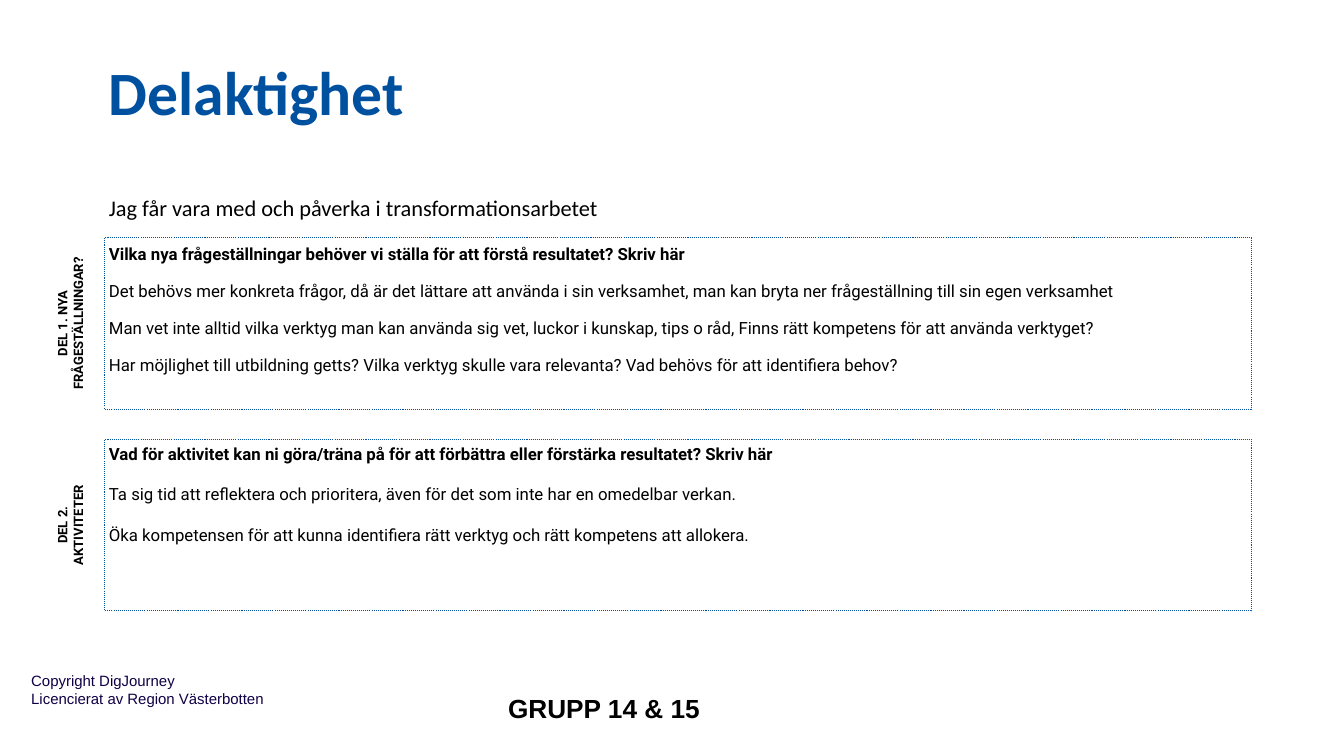
from pptx import Presentation
from pptx.dml.color import RGBColor
from pptx.enum.dml import MSO_LINE_DASH_STYLE as Dash
from pptx.enum.shapes import MSO_SHAPE as Shape
from pptx.enum.text import MSO_ANCHOR as Anchor, PP_ALIGN as Align
from pptx.util import Inches, Pt

BLUE, BLACK, NAVY = "0050A0", "000000", "110046"
LEFT, PANEL_WIDTH, PANEL_HEIGHT = 1.04, 11.37, 1.7
FIRST_PANEL_TOP, PANEL_STEP = 2.36, 2
LABEL_CENTER, LABEL_HEIGHT = 0.7, 0.58
NARROW, WIDE = 0.04, 0.13  # text insets

PANELS = [
    {
        "label": ["DEL 1. NYA FRÅGESTÄLLNINGAR?"],
        "lines": [
            "Vilka nya frågeställningar behöver vi ställa för att förstå resultatet? Skriv här",
            "Det behövs mer konkreta frågor, då är det lättare att använda i sin verksamhet, "
            "man kan bryta ner frågeställning till sin egen verksamhet",
            "Man vet inte alltid vilka verktyg man kan använda sig vet, luckor i kunskap, "
            "tips o råd, Finns rätt kompetens för att använda verktyget?",
            "Har möjlighet till utbildning getts? Vilka verktyg skulle vara relevanta? "
            "Vad behövs för att identifiera behov?",
        ],
        "line_spacing": 1.1,
        "gap": 10.7,
    },
    {
        "label": ["DEL 2.", "AKTIVITETER"],
        "lines": [
            "Vad för aktivitet kan ni göra/träna på för att förbättra eller förstärka "
            "resultatet? Skriv här",
            "Ta sig tid att reflektera och prioritera, även för det som inte har en "
            "omedelbar verkan.",
            "Öka kompetensen för att kunna identifiera rätt verktyg och rätt kompetens "
            "att allokera.",
        ],
        "line_spacing": 1.0,
        "gap": 14.5,
    },
]


def rgb(color):
    return RGBColor.from_string(color)


def write(shape, lines, font, size, color=BLACK, bold=False, align=Align.LEFT,
          anchor=Anchor.TOP, inset=WIDE):
    frame = shape.text_frame
    frame.word_wrap = True
    frame.vertical_anchor = anchor
    frame.margin_left = frame.margin_right = Inches(inset)
    frame.margin_top = frame.margin_bottom = Inches(inset)
    frame.text = "\n".join(lines)
    for paragraph in frame.paragraphs:
        paragraph.alignment = align
        for run in paragraph.runs:
            run.font.name = font
            run.font.size = Pt(size)
            run.font.bold = bold
            run.font.color.rgb = rgb(color)


def add_text(slide, box, lines, font, size, **style):
    shape = slide.shapes.add_textbox(*map(Inches, box))
    write(shape, lines, font, size, **style)
    return shape


def add_panel(slide, top, lines, line_spacing, gap):
    """Dotted answer box with a bold question above its answers."""
    panel = slide.shapes.add_shape(
        Shape.RECTANGLE, *map(Inches, (LEFT, top, PANEL_WIDTH, PANEL_HEIGHT)))
    panel.shadow.inherit = False
    panel.fill.background()
    panel.line.color.rgb = rgb(BLUE)
    panel.line.width = Pt(0.75)
    panel.line.dash_style = Dash.ROUND_DOT
    write(panel, lines, "Roboto", 12, inset=NARROW)
    question, *answers = panel.text_frame.paragraphs
    question.runs[0].font.bold = True
    question.line_spacing = line_spacing
    for answer in answers:
        answer.line_spacing = line_spacing
        answer.space_before = Pt(gap)


def add_side_label(slide, panel_top, lines):
    center = panel_top + PANEL_HEIGHT / 2
    box = (LABEL_CENTER - PANEL_HEIGHT / 2, center - LABEL_HEIGHT / 2,
           PANEL_HEIGHT, LABEL_HEIGHT)
    label = add_text(slide, box, lines, "Roboto", 9.3, bold=True, align=Align.CENTER)
    label.rotation = 270


def main():
    presentation = Presentation()
    presentation.slide_width = Inches(13.33)
    presentation.slide_height = Inches(7.5)
    slide = presentation.slides.add_slide(presentation.slide_layouts[6])

    add_text(slide, (LEFT, -0.05, 9.92, 1.36), ["Delaktighet"], "Calibri", 44,
             color=BLUE, bold=True, anchor=Anchor.BOTTOM, inset=NARROW)
    add_text(slide, (LEFT, 1.44, 7.9, 0.79),
             ["Jag får vara med och påverka i transformationsarbetet"],
             "Calibri", 16, anchor=Anchor.BOTTOM, inset=NARROW)

    for index, panel in enumerate(PANELS):
        top = FIRST_PANEL_TOP + index * PANEL_STEP
        add_panel(slide, top, panel["lines"], panel["line_spacing"], panel["gap"])
        add_side_label(slide, top, panel["label"])

    add_text(slide, (0.18, 6.53, 4.37, 0.63),
             ["Copyright DigJourney", "Licencierat av Region Västerbotten"],
             "Arial", 10.7, color=NAVY)
    add_text(slide, (4.79, 6.74, 2.4, 0.58), ["GRUPP 14 & 15"], "Arial", 18.7,
             bold=True, align=Align.CENTER)
    presentation.save("out.pptx")


if __name__ == "__main__":
    main()
